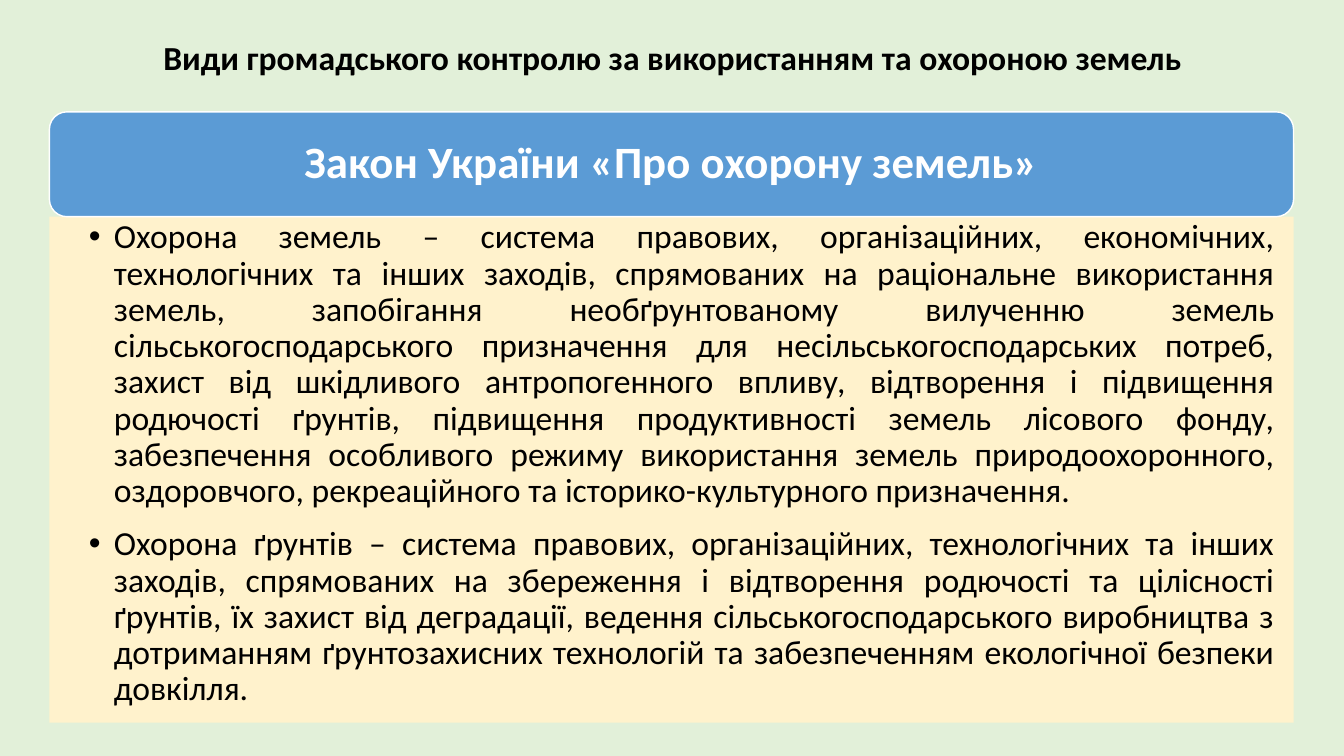
import pptx
import pptx.dml.color
import pptx.enum.shapes
import pptx.enum.text
import pptx.util
from lxml import etree
from pptx.oxml.ns import qn

Inches = pptx.util.Inches
Align = pptx.enum.text.PP_ALIGN
Anchor = pptx.enum.text.MSO_ANCHOR

LEFT, WIDTH = 0.49, 12.34
HEADER_TOP, HEADER_HEIGHT = 1.11, 1.04
BODY_HEIGHT = 5.02

TITLE = "Види громадського контролю за використанням та охороною земель"
LAW = "Закон України «Про охорону земель»"
DEFINITIONS = [
    "Охорона земель – система правових, організаційних, економічних, "
    "технологічних та інших заходів, спрямованих на раціональне використання "
    "земель, запобігання необґрунтованому вилученню земель "
    "сільськогосподарського призначення для несільськогосподарських потреб, "
    "захист від шкідливого антропогенного впливу, відтворення і підвищення "
    "родючості ґрунтів, підвищення продуктивності земель лісового фонду, "
    "забезпечення особливого режиму використання земель природоохоронного, "
    "оздоровчого, рекреаційного та історико-культурного призначення.",
    "Охорона ґрунтів – система правових, організаційних, технологічних та "
    "інших заходів, спрямованих на збереження і відтворення родючості та "
    "цілісності ґрунтів, їх захист від деградації, ведення "
    "сільськогосподарського виробництва з дотриманням ґрунтозахисних "
    "технологій та забезпеченням екологічної безпеки довкілля.",
]


def paint(fill, color):
    fill.solid()
    fill.fore_color.rgb = pptx.dml.color.RGBColor.from_string(color)


def write(para, text, size, color, alignment, bold=False):
    para.alignment = alignment
    para.line_spacing = 0.9
    para.space_before = pptx.util.Pt(0)
    span = para.add_run()
    span.text = text
    span.font.name = "Calibri"
    span.font.size = pptx.util.Pt(size)
    span.font.bold = bold
    paint(span.font.fill, color)


deck = pptx.Presentation()
deck.slide_width, deck.slide_height = Inches(13.33), Inches(7.5)
page = deck.slides.add_slide(deck.slide_layouts[1])
paint(page.background.fill, "E2F0D9")

# Title
title = page.shapes.title
title.left, title.top = Inches(0.92), Inches(0.23)
title.width, title.height = Inches(11.5), Inches(0.73)
title.text_frame.auto_size = pptx.enum.text.MSO_AUTO_SIZE.NONE
title.text_frame.vertical_anchor = Anchor.MIDDLE
write(title.text_frame.paragraphs[0], TITLE, 24, "000000", Align.CENTER, True)

# Law name header
header = page.shapes.add_shape(
    pptx.enum.shapes.MSO_SHAPE.ROUNDED_RECTANGLE,
    Inches(LEFT), Inches(HEADER_TOP), Inches(WIDTH), Inches(HEADER_HEIGHT))
header.shadow.inherit = False
paint(header.fill, "5B9BD5")
paint(header.line.fill, "FFFFFF")
header.line.width = pptx.util.Pt(1)
header.text_frame.word_wrap = True
header.text_frame.vertical_anchor = Anchor.MIDDLE
write(header.text_frame.paragraphs[0], LAW, 32, "FFFFFF", Align.CENTER, True)

# Definitions panel
body = page.placeholders[1]
body.left, body.top = Inches(LEFT), Inches(HEADER_TOP + HEADER_HEIGHT)
body.width, body.height = Inches(WIDTH), Inches(BODY_HEIGHT)
paint(body.fill, "FFF2CC")
frame = body.text_frame
frame.auto_size = pptx.enum.text.MSO_AUTO_SIZE.NONE
frame.vertical_anchor = Anchor.TOP
frame.margin_left, frame.margin_right = Inches(0.39), Inches(0.19)
frame.margin_top = frame.margin_bottom = Inches(0.03)

for index, definition in enumerate(DEFINITIONS):
    para = frame.add_paragraph() if index else frame.paragraphs[0]
    properties = para._p.get_or_add_pPr()
    properties.set("marL", str(Inches(0.25)))
    properties.set("indent", str(Inches(-0.25)))
    etree.SubElement(properties, qn("a:buFont"), typeface="Arial")
    etree.SubElement(properties, qn("a:buChar"), char="•")
    para.space_after = pptx.util.Pt(12)
    write(para, definition, 24, "000000", Align.JUSTIFY)

deck.save("out.pptx")
